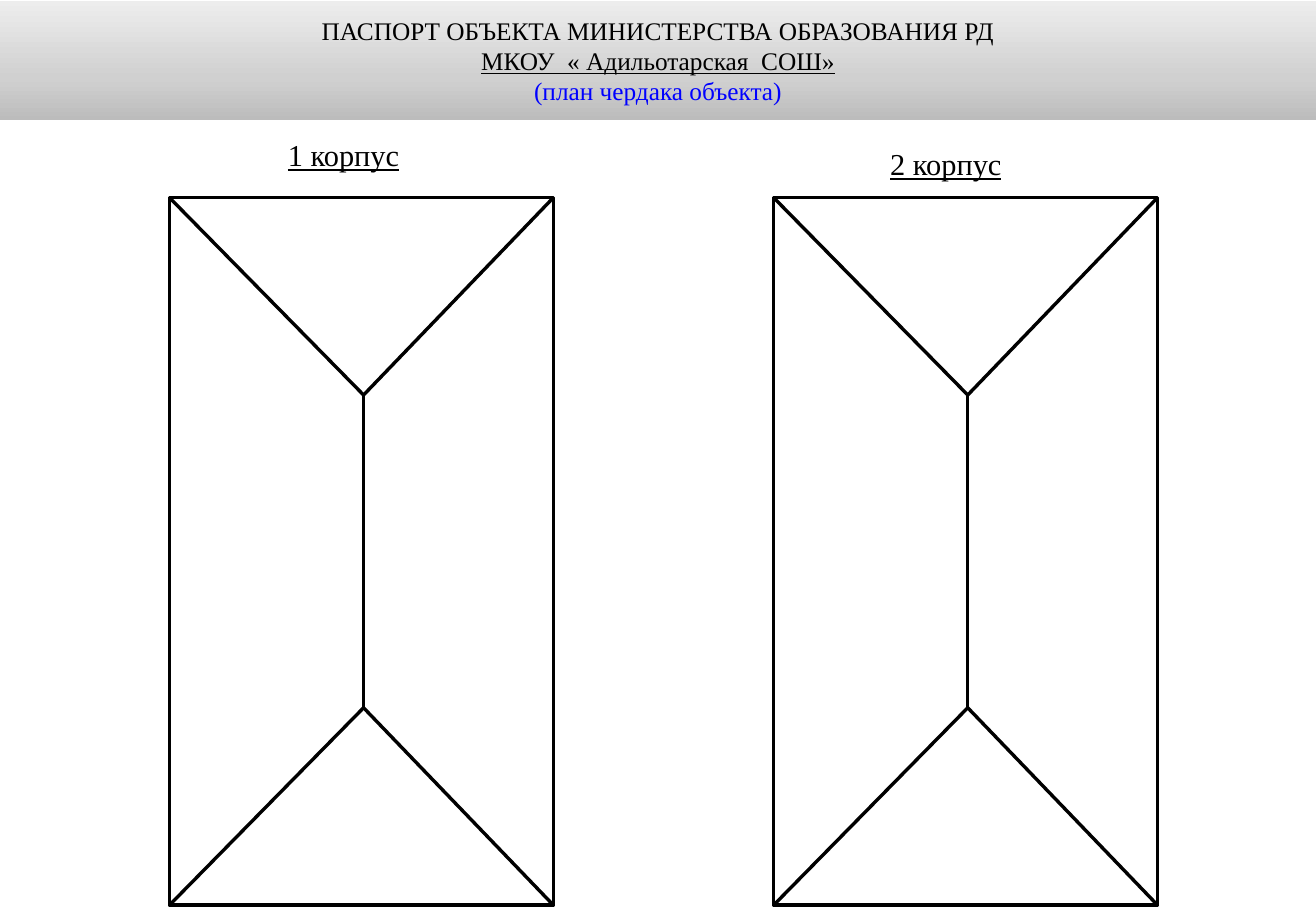
from copy import deepcopy

from lxml import etree
from pptx import Presentation
from pptx import util as u
from pptx.dml.color import RGBColor
from pptx.enum import shapes, text
from pptx.oxml import ns

BLACK = RGBColor(0x00, 0x00, 0x00)
WHITE = RGBColor(0xFF, 0xFF, 0xFF)
BLUE = RGBColor(0x00, 0x00, 0xFF)
BAND_STOPS = (
    (0, RGBColor(0xBC, 0xBC, 0xBC)),
    (0.35, RGBColor(0xD0, 0xD0, 0xD0)),
    (1, RGBColor(0xED, 0xED, 0xED)),
)
FONT = "Times New Roman"
SLIDE_WIDTH, SLIDE_HEIGHT = 27.51, 19.05
ROOF_TOP, ROOF_WIDTH, ROOF_HEIGHT = 4.13, 8.03, 14.8
RIDGE_OFFSET, HIP_DEPTH = 4.06, 4.13


def write(paragraph, content, size=18, color=BLACK, underline=False, align=None):
    run = paragraph.add_run()
    run.text = content
    run.font.name = FONT
    run.font.size = u.Pt(size)
    run.font.color.rgb = color
    run.font.underline = underline
    paragraph.alignment = align


class AtticPlan:
    def __init__(self, slide, line_width=2):
        self.slide = slide
        self.line_width = u.Pt(line_width)

    def header(self, lines):
        title = self.slide.shapes.title
        title.left, title.top = u.Cm(0), u.Cm(0.02)
        title.width, title.height = u.Cm(SLIDE_WIDTH), u.Cm(2.49)
        self.gradient(title.fill)
        frame = title.text_frame
        frame.auto_size = text.MSO_AUTO_SIZE.NONE
        frame.vertical_anchor = text.MSO_ANCHOR.MIDDLE
        for index, (content, style) in enumerate(lines):
            paragraph = frame.add_paragraph() if index else frame.paragraphs[0]
            write(paragraph, content, size=15, align=text.PP_ALIGN.CENTER, **style)

    def gradient(self, fill):
        fill.gradient()
        fill.gradient_angle = 90
        first = fill._fill._gradFill.gsLst[0]
        first.addnext(deepcopy(first))
        for stop, (position, color) in zip(fill.gradient_stops, BAND_STOPS):
            stop.position = position
            stop.color.rgb = color

    def label(self, content, left, top):
        box = self.slide.shapes.add_textbox(u.Cm(left), u.Cm(top), u.Cm(2.87), u.Cm(1.02))
        box.text_frame.word_wrap = False
        box.text_frame.auto_size = text.MSO_AUTO_SIZE.SHAPE_TO_FIT_TEXT
        write(box.text_frame.paragraphs[0], content, underline=True)

    def line(self, group, start, end):
        points = [u.Cm(value) for value in (*start, *end)]
        connector = group.shapes.add_connector(shapes.MSO_CONNECTOR.STRAIGHT, *points)
        connector.line.color.rgb = BLACK
        connector.line.width = self.line_width
        etree.SubElement(connector._element.spPr, ns.qn("a:effectLst"))

    def roof(self, left):
        group = self.slide.shapes.add_group_shape()
        outline = group.shapes.add_shape(
            shapes.MSO_SHAPE.RECTANGLE,
            u.Cm(left), u.Cm(ROOF_TOP), u.Cm(ROOF_WIDTH), u.Cm(ROOF_HEIGHT),
        )
        outline.shadow.inherit = False
        outline.fill.solid()
        outline.fill.fore_color.rgb = WHITE
        outline.line.color.rgb = BLACK
        outline.line.width = self.line_width

        right, bottom = left + ROOF_WIDTH, ROOF_TOP + ROOF_HEIGHT
        ridge_top = (left + RIDGE_OFFSET, ROOF_TOP + HIP_DEPTH)
        ridge_bottom = (left + RIDGE_OFFSET, bottom - HIP_DEPTH)
        self.line(group, ridge_top, ridge_bottom)
        for ridge_end, edge in ((ridge_top, ROOF_TOP), (ridge_bottom, bottom)):
            for side in (left, right):
                self.line(group, (side, edge), ridge_end)


def main():
    presentation = Presentation()
    presentation.slide_width = u.Cm(SLIDE_WIDTH)
    presentation.slide_height = u.Cm(SLIDE_HEIGHT)
    plan = AtticPlan(presentation.slides.add_slide(presentation.slide_layouts[5]))
    plan.header((
        ("ПАСПОРТ ОБЪЕКТА МИНИСТЕРСТВА ОБРАЗОВАНИЯ РД", {}),
        ("МКОУ  « Адильотарская  СОШ»", {"underline": True}),
        ("(план чердака объекта)", {"color": BLUE}),
    ))
    for left in (3.54, 16.17):
        plan.roof(left)
    plan.label("1 корпус", 5.77, 2.72)
    plan.label("2 корпус", 18.36, 2.92)
    presentation.save("out.pptx")


if __name__ == "__main__":
    main()
